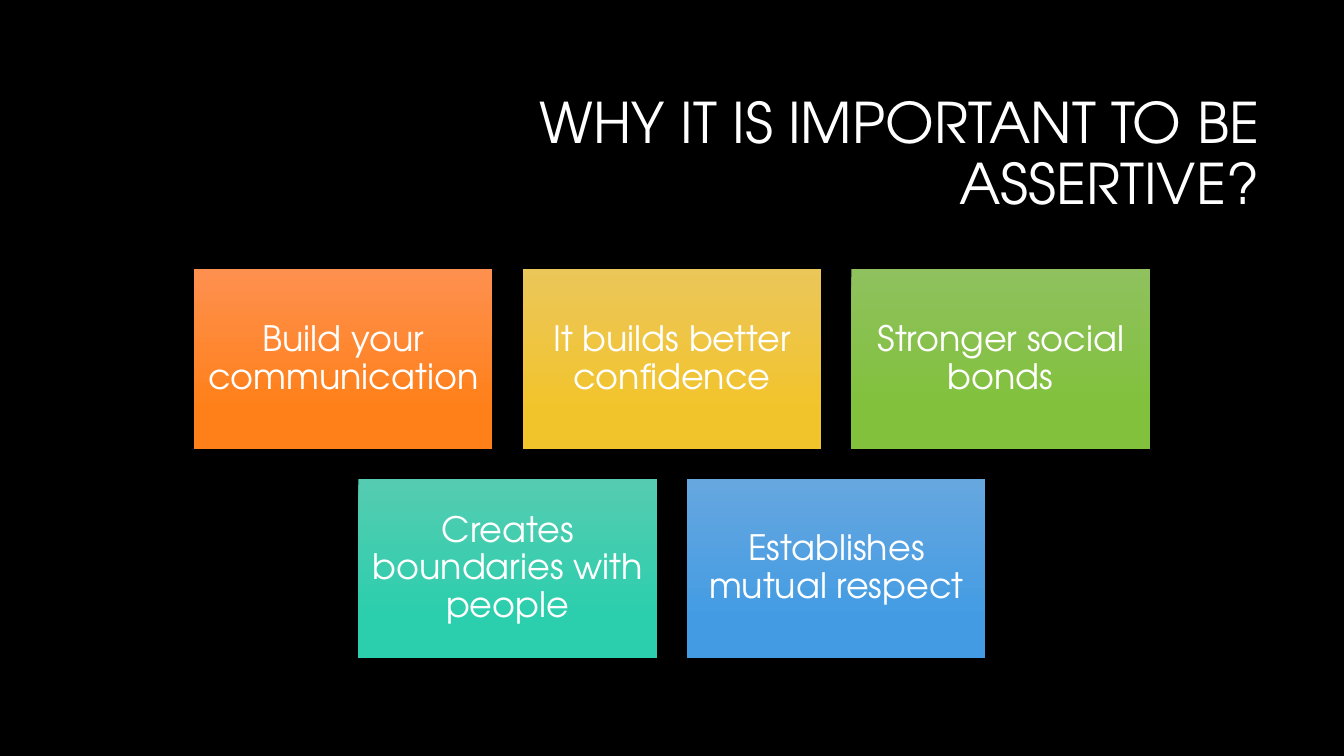
from dataclasses import dataclass

from pptx import Presentation
from pptx.dml.color import RGBColor
from pptx.enum.shapes import MSO_SHAPE
from pptx.enum.text import MSO_ANCHOR, MSO_AUTO_SIZE, PP_ALIGN
from pptx.slide import Slide
from pptx.text.text import TextFrame
from pptx.util import Inches, Pt

RECTANGLE = MSO_SHAPE.RECTANGLE
MIDDLE = MSO_ANCHOR.MIDDLE
NO_AUTOFIT = MSO_AUTO_SIZE.NONE
CENTER, RIGHT = PP_ALIGN.CENTER, PP_ALIGN.RIGHT

FONT = "TeX Gyre Adventor"
COLORS = {
    "background": "000000",
    "text": "FFFFFF",
    "orange top": "FE904F",
    "orange": "FF8019",
    "yellow top": "EBC659",
    "yellow": "F2C42C",
    "green top": "8FC15E",
    "green": "81C13C",
    "teal top": "55CCB1",
    "teal": "2BCEAD",
    "blue top": "66A7E0",
    "blue": "439CE3",
}

PAGE_WIDTH, PAGE_HEIGHT = 13.33, 7.5
CARD_WIDTH, CARD_HEIGHT, CARD_GAP = 2.96, 1.78, 0.3
CARDS_TOP = 2.67
GRADIENT_END = 0.78


@dataclass
class Card:
    text: str
    color: str


CARD_ROWS = [
    [
        Card("Build your communication", "orange"),
        Card("It builds better confidence", "yellow"),
        Card("Stronger social bonds", "green"),
    ],
    [
        Card("Creates boundaries with people", "teal"),
        Card("Establishes mutual respect", "blue"),
    ],
]


def rgb(name: str) -> RGBColor:
    return RGBColor.from_string(COLORS[name])


def write_text(frame: TextFrame, text: str, size: float, alignment: PP_ALIGN) -> None:
    frame.text = text
    frame.word_wrap = True
    frame.auto_size = NO_AUTOFIT
    frame.vertical_anchor = MIDDLE
    para = frame.paragraphs[0]
    para.alignment = alignment
    para.line_spacing = 0.9
    font = para.runs[0].font
    font.name = FONT
    font.size = Pt(size)
    font.color.rgb = rgb("text")


def add_title(page: Slide, text: str) -> None:
    title = page.shapes.title
    title.left, title.top = Inches(3.17), Inches(0.84)
    title.width, title.height = Inches(9.42), Inches(1.41)
    write_text(title.text_frame, text, 40, RIGHT)


def add_card(page: Slide, card: Card, left: float, top: float) -> None:
    box = page.shapes.add_shape(
        RECTANGLE, Inches(left), Inches(top), Inches(CARD_WIDTH), Inches(CARD_HEIGHT)
    )
    box.shadow.inherit = False
    box.line.fill.background()
    box.fill.gradient()
    box.fill.gradient_angle = 270
    first, last = box.fill.gradient_stops
    first.color.rgb = rgb(f"{card.color} top")
    first.position = 0
    last.color.rgb = rgb(card.color)
    last.position = GRADIENT_END

    frame = box.text_frame
    frame.margin_left = frame.margin_right = Inches(0.1)
    frame.margin_top = frame.margin_bottom = Inches(0.1)
    write_text(frame, card.text, 25, CENTER)


def add_card_rows(page: Slide, rows: list[list[Card]]) -> None:
    """Stack the rows of cards, each row centred on the page."""
    for row_index, row in enumerate(rows):
        row_width = len(row) * (CARD_WIDTH + CARD_GAP) - CARD_GAP
        row_left = (PAGE_WIDTH - row_width) / 2
        top = CARDS_TOP + row_index * (CARD_HEIGHT + CARD_GAP)
        for column, card in enumerate(row):
            add_card(page, card, row_left + column * (CARD_WIDTH + CARD_GAP), top)


def main() -> None:
    deck = Presentation()
    deck.slide_width = Inches(PAGE_WIDTH)
    deck.slide_height = Inches(PAGE_HEIGHT)
    page = deck.slides.add_slide(deck.slide_layouts.get_by_name("Title Only"))
    page.background.fill.solid()
    page.background.fill.fore_color.rgb = rgb("background")
    add_title(page, "WHY IT IS IMPORTANT TO BE ASSERTIVE?")
    add_card_rows(page, CARD_ROWS)
    deck.save("out.pptx")


if __name__ == "__main__":
    main()
